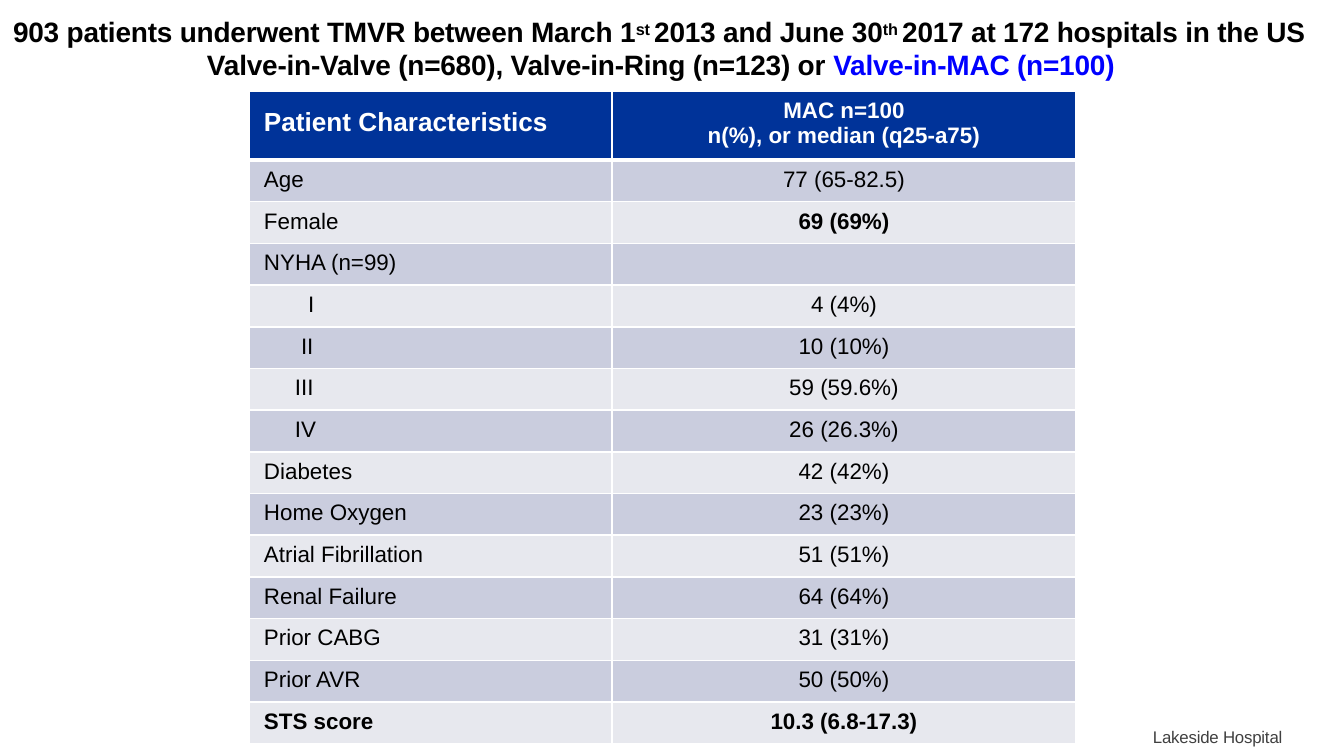
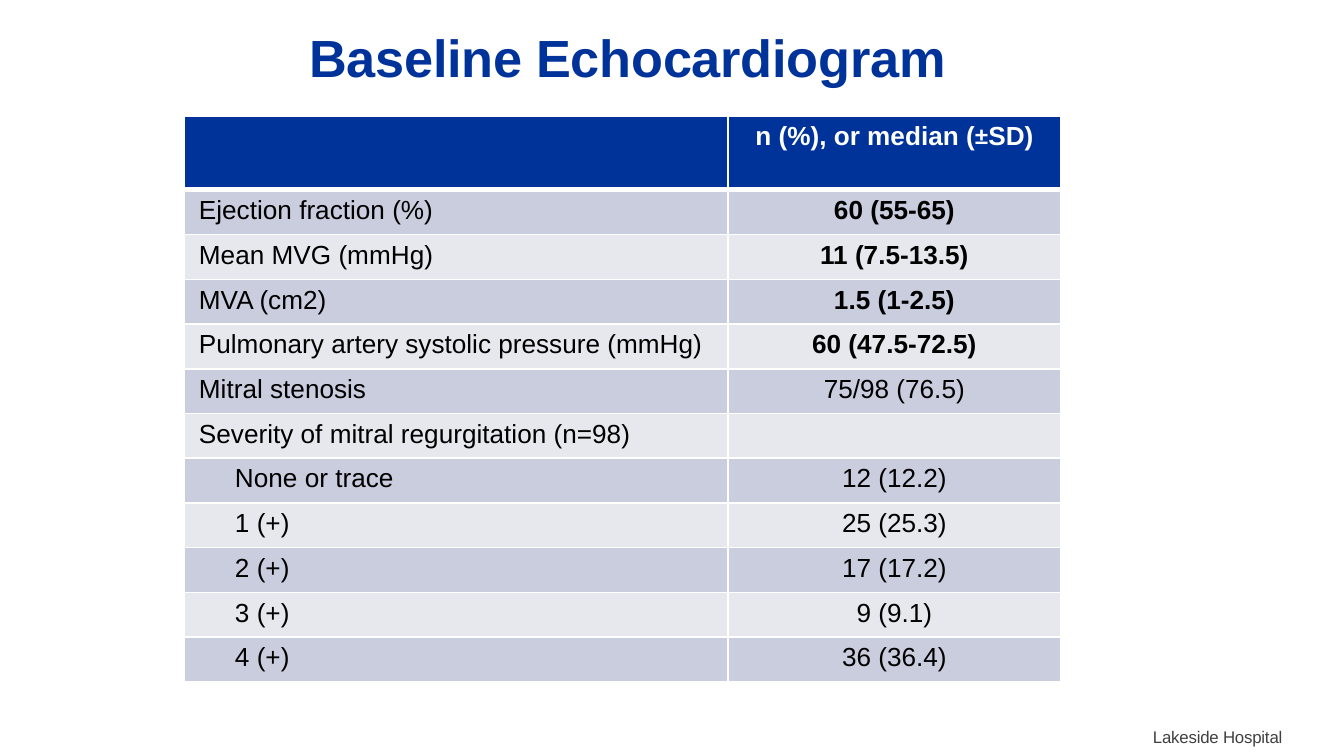
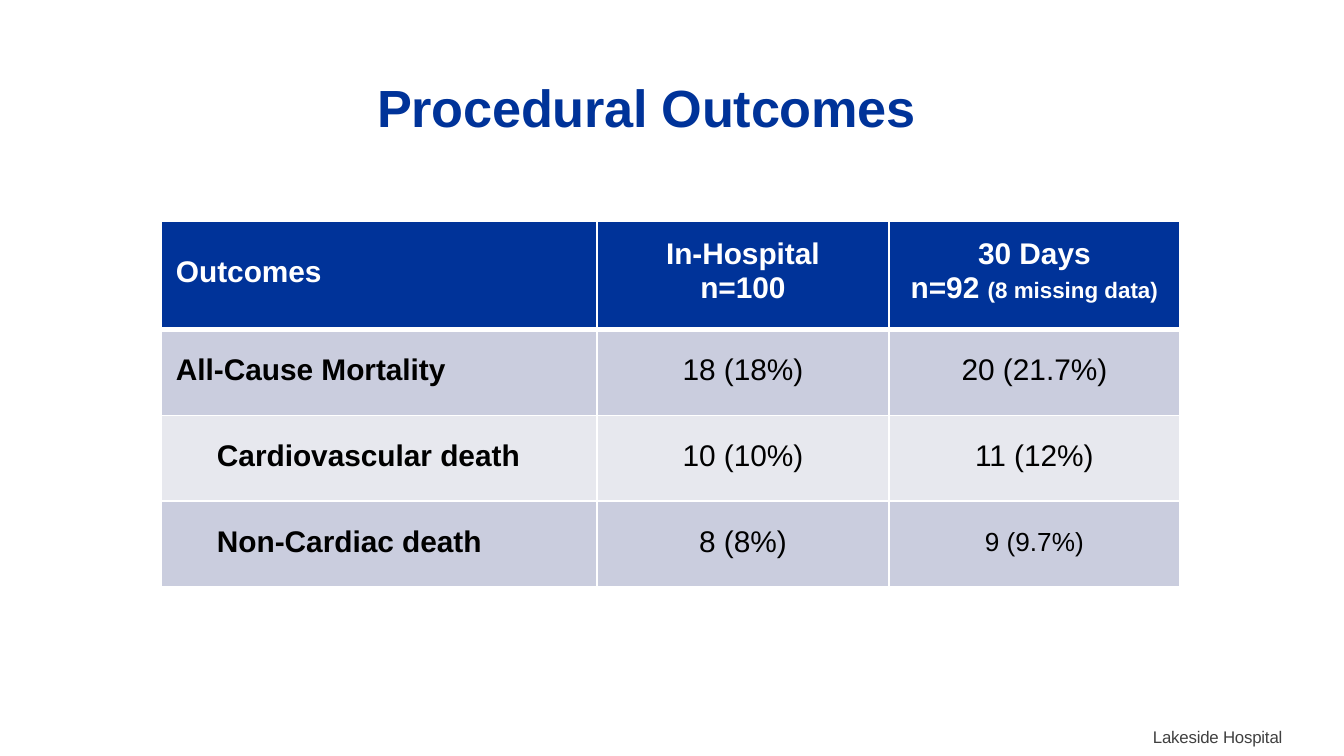
from dataclasses import dataclass, field

from lxml.etree import SubElement
from pptx import Presentation
from pptx.dml.color import RGBColor
from pptx.enum.text import MSO_ANCHOR, MSO_AUTO_SIZE, PP_ALIGN
from pptx.oxml.ns import qn
from pptx.util import Emu, Pt

PX = 914400 / 134.4
BLACK = RGBColor(0x00, 0x00, 0x00)
WHITE = RGBColor(0xFF, 0xFF, 0xFF)
NAVY = RGBColor(0x00, 0x33, 0x99)
BLUE = RGBColor(0x00, 0x00, 0xFF)
GREY = RGBColor(0x40, 0x40, 0x40)
BANDS = [RGBColor(0xCA, 0xCD, 0xDE), RGBColor(0xE7, 0xE8, 0xEE)]
FONT = "Arial"
FOOTER = "Lakeside Hospital"
LABEL_INDENT = 15


@dataclass
class Content:
    title: list
    title_box: tuple
    title_size: int
    title_color: RGBColor
    corner: tuple
    columns: list
    header_height: int
    body_height: int
    size: int
    header_top: int
    body_top: int
    rows: list
    bold: set
    indents: dict
    sizes: dict = field(default_factory=dict)
    tops: dict = field(default_factory=dict)
    hanging: int = 0


CONTENTS = [
    Content(
        title=["903 patients underwent TMVR between March 1", "st ", "2013 and June 30", "th ",
               "2017 at 172 hospitals in the US\vValve-in-Valve (n=680), Valve-in-Ring (n=123) or ",
               "Valve-in-MAC (n=100)"],
        title_box=(12, 13, 1325, 71), title_size=15, title_color=BLACK, hanging=194,
        corner=(249, 91), columns=[363, 464], header_height=69, body_height=584,
        size=12, header_top=7, body_top=7,
        rows=[
            ("Patient Characteristics", "MAC n=100\nn(%), or median (q25-a75)"),
            ("Age", "77 (65-82.5)"),
            ("Female", "69 (69%)"),
            ("NYHA (n=99)", ""),
            ("I", "4 (4%)"),
            ("II", "10 (10%)"),
            ("III", "59 (59.6%)"),
            ("IV", "26 (26.3%)"),
            ("Diabetes", "42 (42%)"),
            ("Home Oxygen", "23 (23%)"),
            ("Atrial Fibrillation", "51 (51%)"),
            ("Renal Failure", "64 (64%)"),
            ("Prior CABG", "31 (31%)"),
            ("Prior AVR", "50 (50%)"),
            ("STS score", "10.3 (6.8-17.3)"),
        ],
        bold={"69 (69%)", "STS score", "10.3 (6.8-17.3)"},
        indents={"I": 59, "II": 52, "III": 46, "IV": 46},
        sizes={"Patient Characteristics": 14}, tops={"Patient Characteristics": 17},
    ),
    Content(
        title=["Baseline Echocardiogram"],
        title_box=(308, 24, 650, 66), title_size=28, title_color=NAVY,
        corner=(184, 116), columns=[544, 333], header_height=74, body_height=492,
        size=14, header_top=5, body_top=6,
        rows=[
            ("", "n (%), or median (|±|SD)"),
            ("Ejection fraction (%)", "60 (55-65)"),
            ("Mean MVG (mmHg)", "11 (7.5-13.5)"),
            ("MVA (cm2)", "1.5 (1-2.5)"),
            ("Pulmonary artery systolic pressure (mmHg)", "60 (47.5-72.5)"),
            ("Mitral stenosis", "75/98 (76.5)"),
            ("Severity of mitral regurgitation (n=98)", ""),
            ("None or trace", "12 (12.2)"),
            ("1 (+)", "25 (25.3)"),
            ("2 (+)", "17 (17.2)"),
            ("3 (+)", "9 (9.1)"),
            ("4 (+)", "36 (36.4)"),
        ],
        bold={"60 (55-65)", "11 (7.5-13.5)", "1.5 (1-2.5)", "60 (47.5-72.5)"},
        indents=dict.fromkeys(["None or trace", "1 (+)", "2 (+)", "3 (+)", "4 (+)"], 51),
    ),
    Content(
        title=["Procedural Outcomes"],
        title_box=(376, 74, 552, 66), title_size=28, title_color=NAVY,
        corner=(161, 221), columns=[436, 292, 291], header_height=109, body_height=257,
        size=16, header_top=17, body_top=24,
        rows=[
            ("Outcomes", "In-Hospital\nn=100", "30 Days\nn=92 |(8 missing data)"),
            ("All-Cause Mortality", "18 (18%)", "20 (21.7%)"),
            ("Cardiovascular death", "10 (10%)", "11 (12%)"),
            ("Non-Cardiac death", "8 (8%)", "9 (9.7%)"),
        ],
        bold={"All-Cause Mortality", "Cardiovascular death", "Non-Cardiac death"},
        indents={"Cardiovascular death": 56, "Non-Cardiac death": 56},
        sizes={"9 (9.7%)": 14}, tops={"Outcomes": 35, "9 (9.7%)": 27},
    ),
]


def px(length):
    return Emu(round(length * PX))


def style(paragraph, size, color, bold):
    font = paragraph.font
    font.name, font.size, font.bold = FONT, Pt(size), bold
    font.color.rgb = color


deck = Presentation()
deck.slide_width, deck.slide_height = px(1344), px(756)

for content in CONTENTS:
    page = deck.slides.add_slide(deck.slide_layouts[5])
    title = page.shapes.title
    footer = page.shapes.add_textbox(px(1152), px(727), px(145), px(23))
    title.left, title.top, title.width, title.height = map(px, content.title_box)
    for box, texts, size, color, bold in [
        (title, content.title, content.title_size, content.title_color, True),
        (footer, [FOOTER], 9, GREY, False),
    ]:
        frame = box.text_frame
        frame.word_wrap = True
        frame.auto_size = MSO_AUTO_SIZE.NONE
        frame.vertical_anchor = MSO_ANCHOR.TOP
        frame.margin_left = frame.margin_right = frame.margin_bottom = 0
        frame.margin_top = px(1) if box is title else 0
        paragraph = frame.paragraphs[0]
        paragraph.alignment = PP_ALIGN.LEFT
        properties = paragraph._p.get_or_add_pPr()
        hanging = content.hanging if box is title else 0
        properties.set("marL", str(px(hanging + 1)))
        properties.set("indent", str(px(-hanging)))
        style(paragraph, size, color, bold)
        for text in texts:
            for number, line in enumerate(text.split("\v")):
                if number:
                    paragraph.add_line_break()
                span = paragraph.add_run()
                span.text = line
                span_properties = span._r.get_or_add_rPr()
                span_properties.set("spc", "-10")
                if line in ("st ", "th "):
                    span_properties.set("baseline", "25000")
                if line.startswith("Valve-in-MAC"):
                    span.font.color.rgb = BLUE

    row_count = len(content.rows)
    left, top = content.corner
    table = page.shapes.add_table(
        row_count, len(content.columns), px(left), px(top),
        px(sum(content.columns)), px(content.header_height + content.body_height)).table
    table.horz_banding = False
    for column, width in zip(table.columns, content.columns):
        column.width = px(width)
    for row_number, values in enumerate(content.rows):
        header = row_number == 0
        table.rows[row_number].height = (
            px(content.header_height) if header else px(content.body_height / (row_count - 1)))
        for column_number, value in enumerate(values):
            cell = table.cell(row_number, column_number)
            cell.margin_left = cell.margin_right = cell.margin_bottom = 0
            default_top = content.header_top if header else content.body_top
            cell.margin_top = px(content.tops.get(value, default_top)) if value else 0
            for side in "LRTB":
                thick = (row_number, side) in [(0, "B"), (1, "T")]
                border = SubElement(cell._tc.tcPr, qn(f"a:ln{side}"), w=str(Pt(3 if thick else 1)))
                fill = SubElement(border, qn("a:solidFill"))
                SubElement(fill, qn("a:srgbClr"), val=str(WHITE))
            cell.fill.solid()
            cell.fill.fore_color.rgb = NAVY if header else BANDS[(row_number - 1) % 2]
            for number, line in enumerate(value.split("\n")):
                frame = cell.text_frame
                paragraph = frame.add_paragraph() if number else frame.paragraphs[0]
                if column_number:
                    paragraph.alignment = PP_ALIGN.CENTER
                else:
                    indent = content.indents.get(value, LABEL_INDENT)
                    paragraph._p.get_or_add_pPr().set("marL", str(px(indent)))
                style(paragraph, content.sizes.get(value, content.size),
                      WHITE if header else BLACK, header or value in content.bold)
                for part in filter(None, line.split("|")):
                    span = paragraph.add_run()
                    span.text = part
                    if part == "±":
                        span.font.name = "Calibri"
                    if part == "(8 missing data)":
                        span.font.size = Pt(12)

deck.save("out.pptx")
